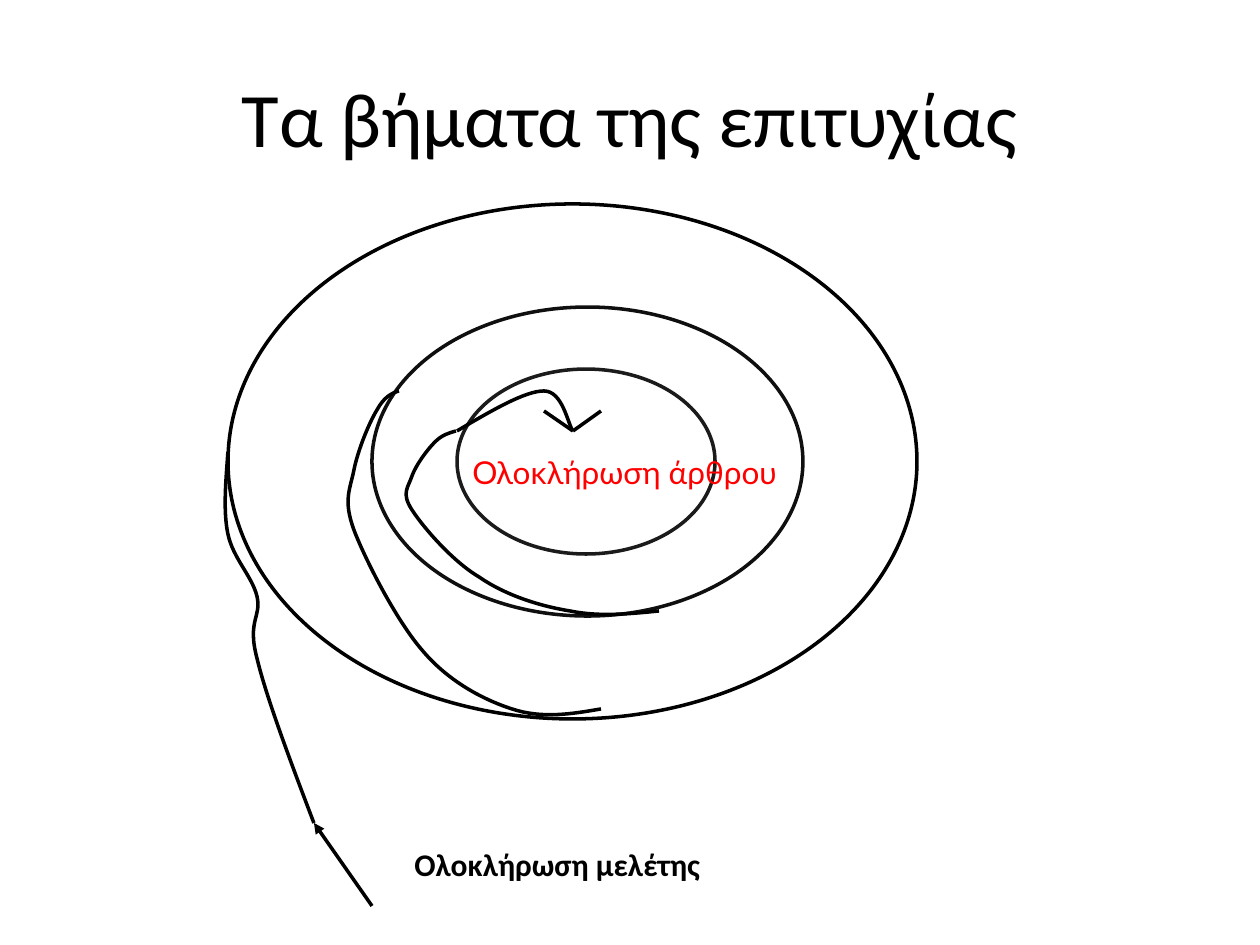
import lxml.etree
import pptx
import pptx.dml.color
import pptx.enum.shapes
import pptx.enum.text
import pptx.oxml.ns
import pptx.util

SCALE = 914400 / 126  # EMU per px
qn = pptx.oxml.ns.qn


def px(*lengths):
    return [pptx.util.Emu(round(length * SCALE)) for length in lengths]


def color(hex_string):
    return pptx.dml.color.RGBColor.from_string(hex_string)


presentation = pptx.Presentation()
presentation.slide_width, presentation.slide_height = px(1260, 945)
slide = presentation.slides.add_slide(presentation.slide_layouts[6])
shapes = slide.shapes
outlined = []

# Rings, from the inside out, with an almost clear white fill
rings = [
    ((457, 369, 258, 185), 4),
    ((372, 307, 431, 309), 5),
    ((228, 204, 689, 515), 6),
]
for box, opacity in rings:
    ring = shapes.add_shape(pptx.enum.shapes.MSO_SHAPE.OVAL, *px(*box))
    ring.fill.solid()
    ring.fill.fore_color.rgb = color("FFFFFF")
    fill_color = ring.element.spPr.find(".//" + qn("a:srgbClr"))
    lxml.etree.SubElement(fill_color, qn("a:alpha"), val=str(opacity * 1000))
    ring.shadow.inherit = False
    outlined.append(ring)

# Spiral path: each curve is a start point, then three points per Bezier segment
curves = [
    [(314, 823), (290, 760), (266, 696), (257, 658), (247, 620), (262, 617), (257, 596),
     (252, 576), (233, 558), (228, 534), (223, 510), (226, 481), (228, 452)],
    [(601, 709), (572, 714), (542, 719), (512, 709), (481, 699), (447, 680), (422, 650),
     (396, 620), (365, 559), (354, 530), (343, 500), (350, 490), (354, 470),
     (358, 450), (369, 423), (377, 410), (384, 397), (392, 393), (399, 391)],
    [(659, 611), (629, 614), (599, 617), (570, 611), (539, 606), (505, 595), (479, 577),
     (452, 561), (423, 527), (412, 510), (401, 493), (408, 488), (412, 476),
     (416, 465), (427, 450), (435, 442), (442, 435), (449, 433), (456, 431)],
    [(457, 431), (491, 411), (525, 391), (544, 391), (563, 391), (568, 425), (573, 431)],
]
for start, *points in curves:
    builder = shapes.build_freeform(*start, scale=SCALE)
    builder.add_line_segments(points, close=False)
    curve = builder.convert_to_shape()
    # Merge every three straight segments into one Bezier segment
    segments = curve.element.findall(".//" + qn("a:lnTo"))
    for index in range(0, len(segments), 3):
        bezier, *others = segments[index:index + 3]
        bezier.tag = qn("a:cubicBezTo")
        for other in others:
            bezier.append(other[0])
            other.getparent().remove(other)
    curve.fill.background()
    curve.shadow.inherit = False
    outlined.append(curve)

# Entry arrow and the two strokes of the open arrowhead
strokes = [
    ((372, 906, 314, 823), True),
    ((544, 411, 573, 431), False),
    ((573, 431, 601, 411), False),
]
for ends, has_arrow in strokes:
    stroke = shapes.add_connector(pptx.enum.shapes.MSO_CONNECTOR.STRAIGHT, *px(*ends))
    if has_arrow:
        lxml.etree.SubElement(stroke.line._get_or_add_ln(), qn("a:tailEnd"), type="triangle")
    lxml.etree.SubElement(stroke.element.spPr, qn("a:effectLst"))
    outlined.append(stroke)

for shape in outlined:
    shape.line.color.rgb = color("000000")
    shape.line.width = pptx.util.Pt(2)

# Title and labels
ANCHOR = pptx.enum.text.MSO_ANCHOR
ALIGN = pptx.enum.text.PP_ALIGN
texts = [
    ("Τα βήματα της επιτυχίας", (63, 38, 1134, 158), "000000",
     {"name": "Calibri", "size": pptx.util.Pt(44)},
     {"word_wrap": True, "vertical_anchor": ANCHOR.MIDDLE}, ALIGN.CENTER),
    ("Ολοκλήρωση άρθρου", (460, 447, 340, 50), "FF0000",
     {"name": "Lato", "size": pptx.util.Pt(18)},
     {"word_wrap": True, "vertical_anchor": ANCHOR.TOP}, ALIGN.LEFT),
    ("Ολοκλήρωση μελέτης", (402, 839, 314, 50), "000000",
     {"name": "Calibri", "size": pptx.util.Pt(18), "bold": True},
     {"word_wrap": False, "vertical_anchor": ANCHOR.TOP}, ALIGN.LEFT),
]
for text, box, text_color, font_format, frame_format, alignment in texts:
    frame = shapes.add_textbox(*px(*box)).text_frame
    paragraph = frame.paragraphs[0]
    paragraph.alignment = alignment
    run = paragraph.add_run()
    run.text = text
    run.font.color.rgb = color(text_color)
    for target, values in ((frame, frame_format), (run.font, font_format)):
        for attribute, value in values.items():
            setattr(target, attribute, value)

presentation.save("out.pptx")
